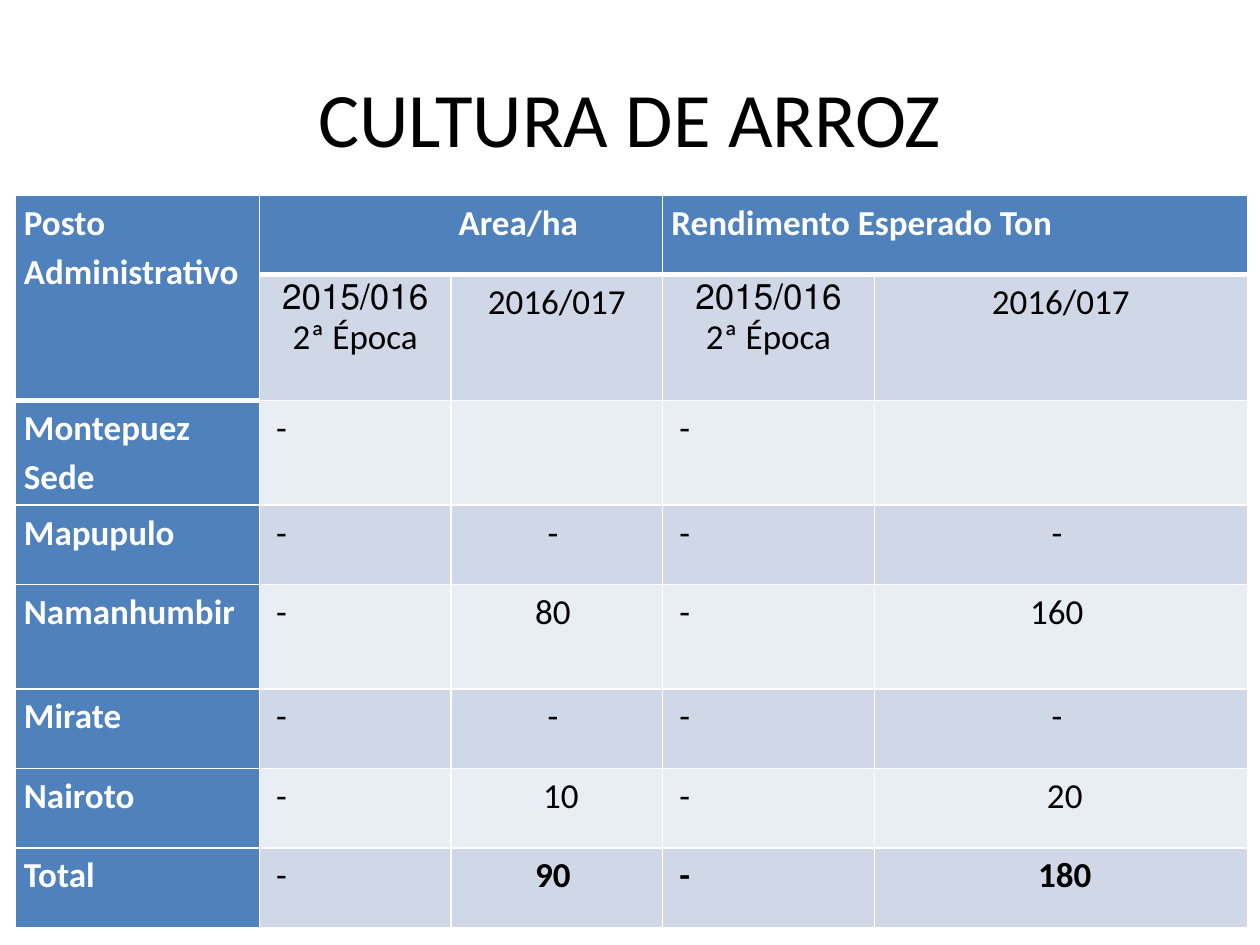
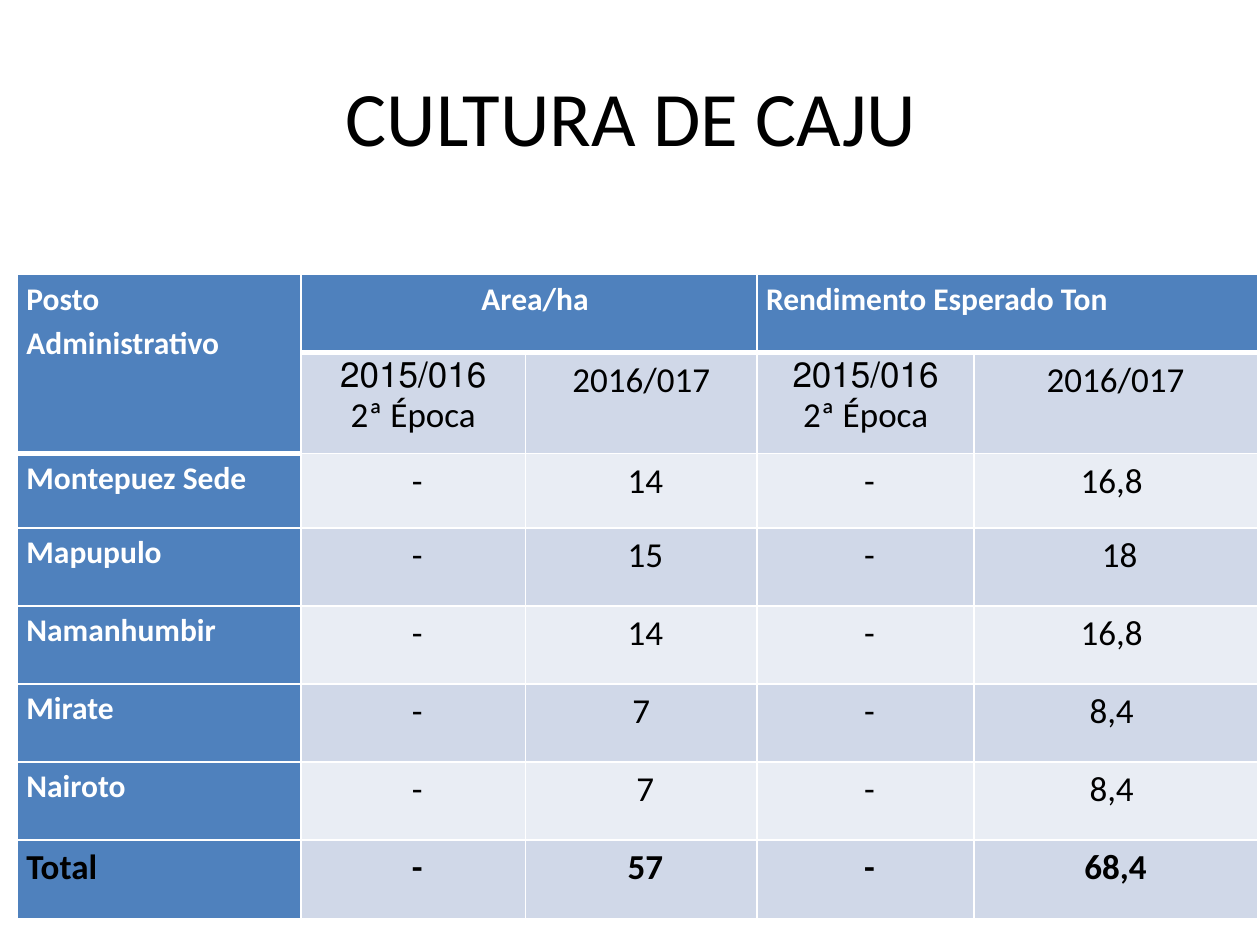
from dataclasses import dataclass

import pptx
import pptx.dml.color
import pptx.enum.text
import pptx.oxml
import pptx.oxml.ns
import pptx.util
from pptx.util import Inches

COLORS = {"header": "4F81BD", "band_dark": "D0D8E8", "band_light": "E9EDF4",
          "white": "FFFFFF", "black": "000000"}
FONT = "Calibri"
BODY_SIZE = 20
HARD_SPACE = chr(160)  # written as ~ in the table values
CENTER = pptx.enum.text.PP_ALIGN.CENTER
LEFT = pptx.enum.text.PP_ALIGN.LEFT
SEASONS = ["2015/016\n2ª Época", "2016/017"] * 2


@dataclass
class Crop:
    title: str
    title_at: tuple
    table_at: tuple
    widths: list
    heights: list
    label_size: int
    area_indent: float
    season_align: object
    rows: list
    plain_totals: tuple
    total_size: int
    total_color: str


RICE = Crop(
    title="CULTURA DE ARROZ", title_at=(0.5, 0.3), table_at=(0.12, 1.55),
    widths=[1.94, 1.52, 1.68, 1.68, 2.96],
    heights=[0.63, 1, 0.83, 0.63, 0.83, 0.63, 0.63, 0.63],
    label_size=20, area_indent=1.58, season_align=LEFT,
    rows=[["Montepuez Sede", "~-", "", "~-", ""],
          ["Mapupulo", "~-", "-~", "~-", "-~"],
          ["Namanhumbir", "~-", "80~", "~-", "160~"],
          ["Mirate", "~-", "-~", "~-", "-~"],
          ["Nairoto", "~-", "~10", "~-", "~20"],
          ["Total", "~-", "90~", "~-", "~180"]],
    plain_totals=(1,), total_size=20, total_color="white")

CASHEW = Crop(
    title="CULTURA DE CAJU", title_at=(0.51, 0.29), table_at=(0.14, 2.18),
    widths=[2.25, 1.78, 1.84, 1.72, 2.25],
    heights=[0.62, 0.8, 0.59] + [0.62] * 5,
    label_size=18, area_indent=1.43, season_align=CENTER,
    rows=[["Montepuez Sede", "~-", "~14", "~-", "16,8~"],
          ["Mapupulo", "~-", "~15", "~-", "~18"],
          ["Namanhumbir", "~-", "~14", "~-", "16,8~"],
          ["Mirate", "~-", "7", "~-", "8,4~"],
          ["Nairoto", "~-", "~7", "~-", "8,4~"],
          ["Total", "~-", "~57", "~-", "68,4"]],
    plain_totals=(), total_size=20, total_color="black")


def rgb(name):
    return pptx.dml.color.RGBColor.from_string(COLORS[name])


def style_paragraph(para, size, color, bold=False, align=LEFT, right_to_left=False):
    para.alignment = align
    para.font.name = FONT
    para.font.size = pptx.util.Pt(size)
    para.font.bold = bold
    para.font.color.rgb = rgb(color)
    for span in para.runs:
        span.font.name = FONT
        span.font.size = pptx.util.Pt(size)
        span.font.bold = bold
        span.font.color.rgb = rgb(color)
    if right_to_left:
        para._p.get_or_add_pPr().set("rtl", "1")


def fill_cell(cell, color):
    cell.fill.solid()
    cell.fill.fore_color.rgb = rgb(color)


def set_borders(cell, top, bottom):
    """Draw white borders; the side ones are always 1 point wide."""
    properties = cell._tc.get_or_add_tcPr()
    for index, (side, width) in enumerate(
            [("L", 1), ("R", 1), ("T", top), ("B", bottom)]):
        line = pptx.oxml.parse_xml(
            f'<a:ln{side} {pptx.oxml.ns.nsdecls("a")} w="{pptx.util.Pt(width)}">'
            f'<a:solidFill><a:srgbClr val="{COLORS["white"]}"/></a:solidFill>'
            f'</a:ln{side}>')
        properties.insert(index, line)


def write_cell(cell, text, size, color, bold=False, align=LEFT, indent=0.07):
    cell.margin_left, cell.margin_right = Inches(indent), Inches(0.07)
    cell.margin_top = cell.margin_bottom = 0
    if text:
        cell.text = text.replace("~", HARD_SPACE)
        para = cell.text_frame.paragraphs[0]
        para.line_spacing = 1.15
        style_paragraph(para, size, color, bold, align)


def write_season(cell, text):
    cell.text = text
    paragraphs = cell.text_frame.paragraphs
    for para in paragraphs:
        style_paragraph(para, BODY_SIZE, "black", align=CENTER,
                        right_to_left=len(paragraphs) > 1)


def add_title(page, crop):
    title = page.shapes.title
    title.left, title.top = map(Inches, crop.title_at)
    title.width, title.height = Inches(9), Inches(1.25)
    title.text_frame.text = crop.title
    title.text_frame.vertical_anchor = pptx.enum.text.MSO_ANCHOR.MIDDLE
    style_paragraph(title.text_frame.paragraphs[0], 44, "black", align=CENTER,
                    right_to_left=True)


def paint_grid(table):
    for row in range(len(table.rows)):
        for column in range(len(table.columns)):
            cell = table.cell(row, column)
            band = "band_dark" if row % 2 else "band_light"
            fill_cell(cell, "header" if row == 0 or column == 0 else band)
            last_header_row = 1 if column == 0 else 0
            set_borders(cell, top=3 if row == last_header_row + 1 else 1,
                        bottom=3 if row <= last_header_row else 1)


def write_headings(table, crop):
    for first, last in [((0, 0), (1, 0)), ((0, 1), (0, 2)), ((0, 3), (0, 4))]:
        table.cell(*first).merge(table.cell(*last))
    headings = [(0, "Posto Administrativo", 0.07), (1, "Area/ha", crop.area_indent),
                (3, "Rendimento Esperado Ton", 0.07)]
    for column, text, indent in headings:
        write_cell(table.cell(0, column), text, crop.label_size, "white", True,
                   indent=indent)
    for column, season in enumerate(SEASONS, start=1):
        write_season(table.cell(1, column), season)


def write_values(table, crop):
    for row, (label, *values) in enumerate(crop.rows, start=2):
        is_total = label == "Total"
        write_cell(table.cell(row, 0), label,
                   crop.total_size if is_total else crop.label_size,
                   crop.total_color if is_total else "white", True)
        for column, value in enumerate(values, start=1):
            write_cell(table.cell(row, column), value, BODY_SIZE, "black",
                       is_total and column not in crop.plain_totals,
                       crop.season_align if column % 2 else CENTER)


def add_crop_table(page, crop):
    left, top = crop.table_at
    table = page.shapes.add_table(
        len(crop.heights), len(crop.widths), Inches(left), Inches(top),
        Inches(sum(crop.widths)), Inches(sum(crop.heights))).table
    table.first_col = True
    for column, width in zip(table.columns, crop.widths):
        column.width = Inches(width)
    for row, height in zip(table.rows, crop.heights):
        row.height = Inches(height)
    paint_grid(table)
    write_headings(table, crop)
    write_values(table, crop)


def main():
    deck = pptx.Presentation()
    deck.slide_width, deck.slide_height = Inches(10), Inches(7.5)
    for crop in (RICE, CASHEW):
        page = deck.slides.add_slide(deck.slide_layouts.get_by_name("Title Only"))
        add_title(page, crop)
        add_crop_table(page, crop)
    deck.save("out.pptx")


if __name__ == "__main__":
    main()
